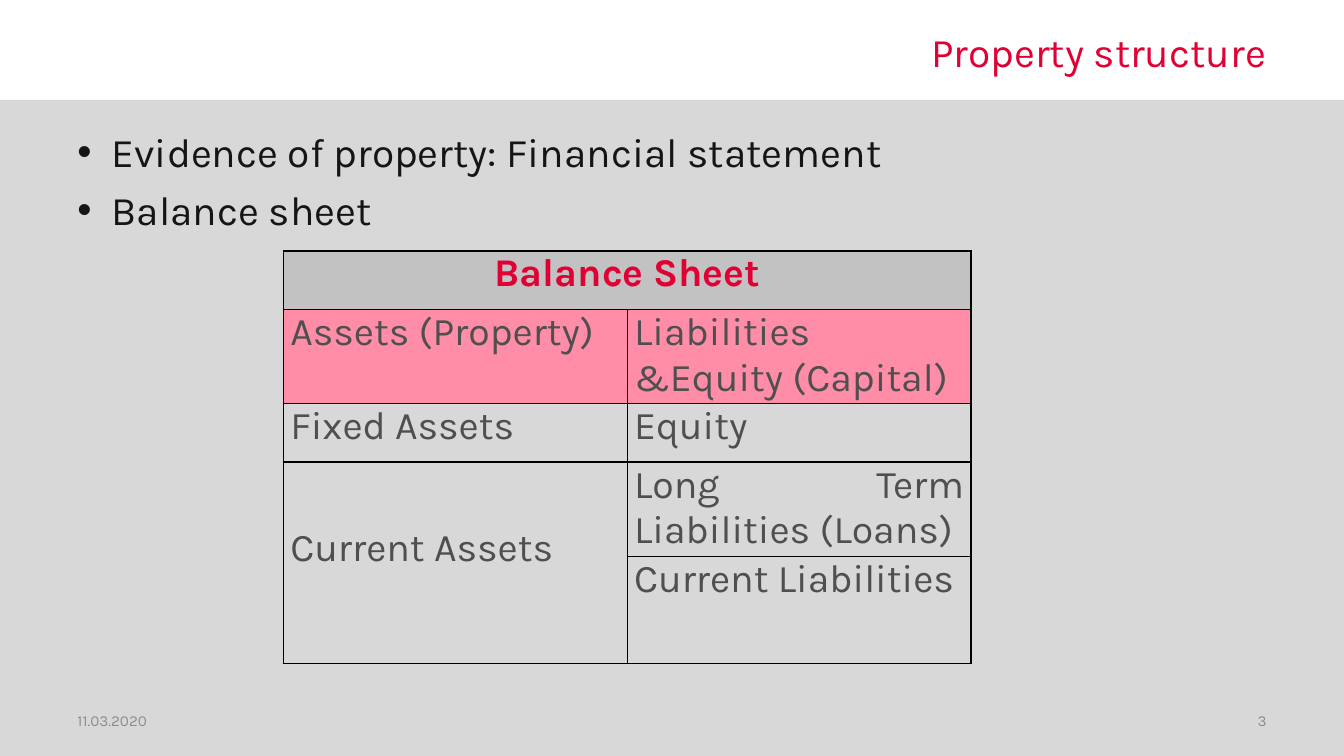
from dataclasses import dataclass
from typing import Optional

from lxml.etree import SubElement as Sub
from pptx import Presentation
from pptx.dml.color import RGBColor
from pptx.enum.shapes import MSO_SHAPE as Shape
from pptx.enum.text import MSO_ANCHOR as Anchor, PP_ALIGN as Align
from pptx.oxml.ns import qn
from pptx.util import Inches, Pt

RED = RGBColor(0xE0, 0x00, 0x34)
INK = RGBColor(0x15, 0x15, 0x15)
TEXT = RGBColor(0x4F, 0x4F, 0x4F)
MUTED = RGBColor(0x8C, 0x8C, 0x8C)
PANEL = RGBColor(0xD8, 0xD8, 0xD8)
HEAD = RGBColor(0xC2, 0xC2, 0xC2)
PINK = RGBColor(0xFF, 0x8D, 0xA7)
FONT = "Karla"


@dataclass
class Label:
    lines: list[str]
    box: tuple[float, float, float, float]
    size: float
    color: RGBColor
    align: Align = Align.LEFT
    anchor: Anchor = Anchor.MIDDLE
    bullet: bool = False
    top: float = 0.05


@dataclass
class Entry:
    row: int
    col: int
    text: str
    fill: Optional[RGBColor] = None
    color: RGBColor = TEXT
    bold: bool = False
    align: Align = Align.JUSTIFY
    span: tuple[int, int] = (1, 1)
    top: float = 0


LABELS = [
    Label(["Property structure"], (3.4, 0.18, 9.26, 0.66), 29, RED, Align.RIGHT),
    Label(["Evidence of property: Financial statement", "Balance sheet"],
          (0.67, 1.18, 12, 5.52), 29, INK, anchor=Anchor.TOP, bullet=True, top=0.08),
    Label(["11.03.2020"], (0.67, 6.95, 3.11, 0.4), 10.9, MUTED),
    Label(["3"], (9.55, 6.95, 3.11, 0.4), 10.9, MUTED, Align.RIGHT),
]
ENTRIES = [
    Entry(0, 0, "Balance Sheet", HEAD, RED, True, Align.CENTER, (1, 2)),
    Entry(1, 0, "Assets (Property)", PINK),
    Entry(1, 1, "Liabilities &Equity (Capital)", PINK),
    Entry(2, 0, "Fixed Assets"),
    Entry(2, 1, "Equity"),
    Entry(3, 0, "Current Assets", span=(2, 1), top=0.63),
    Entry(3, 1, "Long Term Liabilities (Loans)"),
    Entry(4, 1, "Current Liabilities"),
]
ROWS = [0.58, 0.58, 0.58, 0.58, 1.06]
COLS = [3.41, 3.41]


def write(para, text: str, *, size: float, color: RGBColor,
          align: Align, bold: bool = False, bullet: bool = False) -> None:
    if bullet:
        props = para._p.get_or_add_pPr()
        props.set("marL", str(Inches(0.34)))
        props.set("indent", str(-Inches(0.34)))
        Sub(props, qn("a:buFont")).set("typeface", "Arial")
        Sub(props, qn("a:buChar")).set("char", "•")
    para.alignment = align
    run = para.add_run()
    run.text = text
    font = run.font
    font.name, font.size, font.bold = FONT, Pt(size), bold
    font.color.rgb = color


def put_label(slide, label: Label) -> None:
    frame = slide.shapes.add_textbox(*map(Inches, label.box)).text_frame
    frame.word_wrap = True
    frame.vertical_anchor = label.anchor
    frame.margin_top = Inches(label.top)
    for num, line in enumerate(label.lines):
        para = frame.add_paragraph() if num else frame.paragraphs[0]
        write(para, line, size=label.size, color=label.color,
              align=label.align, bullet=label.bullet)
        if num:
            para.space_before = Pt(6.8)


def rule(cell) -> None:
    props = cell._tc.get_or_add_tcPr()
    for num, side in enumerate(("lnL", "lnR", "lnT", "lnB")):
        line = props.makeelement(qn(f"a:{side}"), {"w": str(Pt(1))})
        fill = Sub(line, qn("a:solidFill"))
        Sub(fill, qn("a:srgbClr")).set("val", "000000")
        props.insert(num, line)


def put_table(slide) -> None:
    frame = slide.shapes.add_table(
        len(ROWS), len(COLS), Inches(2.81), Inches(2.49),
        Inches(sum(COLS)), Inches(sum(ROWS)))
    table = frame.table
    table.first_row = table.horz_banding = False
    for row, size in zip(table.rows, ROWS):
        row.height = Inches(size)
    for col, size in zip(table.columns, COLS):
        col.width = Inches(size)
    for cell in table.iter_cells():
        cell.fill.background()
        rule(cell)
    for item in ENTRIES:
        cell = table.cell(item.row, item.col)
        high, wide = item.span
        if item.span != (1, 1):
            cell.merge(table.cell(item.row + high - 1, item.col + wide - 1))
        if item.fill is not None:
            cell.fill.solid()
            cell.fill.fore_color.rgb = item.fill
        cell.margin_left = cell.margin_right = Inches(0.07)
        cell.margin_top, cell.margin_bottom = Inches(item.top), 0
        write(cell.text_frame.paragraphs[0], item.text, size=28,
              color=item.color, align=item.align, bold=item.bold)


def main() -> None:
    deck = Presentation()
    deck.slide_width, deck.slide_height = Inches(13.33), Inches(7.5)
    slide = deck.slides.add_slide(deck.slide_layouts[6])
    panel = slide.shapes.add_shape(
        Shape.RECTANGLE, 0, Inches(0.99), Inches(13.33), Inches(6.51))
    panel.shadow.inherit = False
    panel.fill.solid()
    panel.fill.fore_color.rgb = PANEL
    panel.line.fill.background()
    for label in LABELS:
        put_label(slide, label)
    put_table(slide)
    deck.save("out.pptx")


if __name__ == "__main__":
    main()
